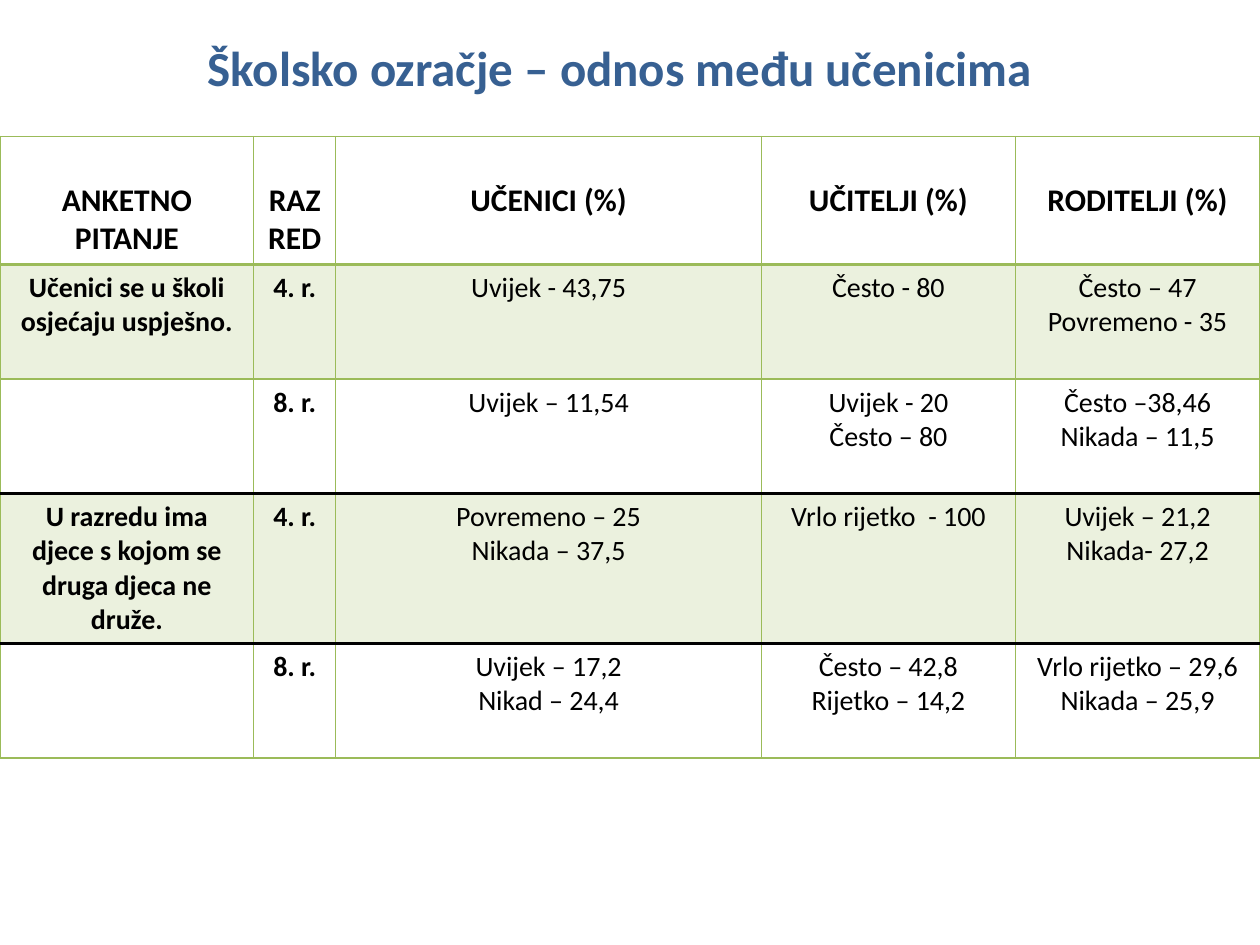
from pptx import Presentation
from pptx.dml.color import RGBColor
from pptx.enum.text import MSO_AUTO_SIZE, PP_ALIGN
from pptx.oxml.ns import qn
from pptx.util import Pt
from lxml import etree

CENTER = PP_ALIGN.CENTER
FIT_SHAPE = MSO_AUTO_SIZE.SHAPE_TO_FIT_TEXT

FONT = "Calibri"
GREEN, PALE_GREEN, BLACK, BLUE = "9BBB59", "EBF1DE", "000000", "376092"
THIN = (GREEN, 1)
HEADER_RULE = (GREEN, 2)
QUESTION_RULE = (BLACK, 2.25)

COLUMN_WIDTHS = [145, 46.8, 243.4, 145, 139.8]
ROW_HEIGHT = 65.5
HEADER_TOP_MARGIN = 25.6

# Each line of a cell is one paragraph
ROWS = [
    ["ANKETNO PITANJE", "RAZRED", "UČENICI (%)", "UČITELJI (%)", "RODITELJI (%)"],
    ["Učenici se u školi osjećaju uspješno.", "4. r.", "Uvijek - 43,75",
     "Često - 80", "Često – 47\nPovremeno - 35"],
    ["", "8. r.", "Uvijek – 11,54", "Uvijek - 20\nČesto – 80",
     "Često –38,46\nNikada – 11,5"],
    ["U razredu ima djece s kojom se druga djeca ne druže.", "4. r.",
     "Povremeno – 25\nNikada – 37,5", "Vrlo rijetko  - 100",
     "Uvijek – 21,2\nNikada- 27,2"],
    ["", "8. r.", "Uvijek – 17,2\nNikad – 24,4", "Često – 42,8\nRijetko – 14,2",
     "Vrlo rijetko – 29,6\nNikada – 25,9"],
]
# Horizontal rules, from above the header to below the last row
RULES = [THIN, HEADER_RULE, THIN, QUESTION_RULE, QUESTION_RULE, THIN]


def color(hex_code):
    return RGBColor.from_string(hex_code)


def write_lines(frame, text, size, hex_code, bold):
    for index, line in enumerate(text.split("\n")):
        para = frame.paragraphs[0] if index == 0 else frame.add_paragraph()
        para.alignment = CENTER
        if line:
            span = para.add_run()
            span.text = line
            span.font.name = FONT
            span.font.size = Pt(size)
            span.font.bold = bold
            span.font.color.rgb = color(hex_code)


def set_border(cell, side, rule):
    hex_code, width = rule
    properties = cell._tc.get_or_add_tcPr()
    line = etree.SubElement(properties, qn(f"a:ln{side}"), w=str(Pt(width)))
    fill = etree.SubElement(line, qn("a:solidFill"))
    etree.SubElement(fill, qn("a:srgbClr"), val=hex_code)


def format_cell(cell, row, column):
    # Borders come before the fill in the cell properties
    sides = {"L": THIN, "R": THIN, "T": RULES[row], "B": RULES[row + 1]}
    for side, rule in sides.items():
        set_border(cell, side, rule)
    if row % 2:
        cell.fill.solid()
        cell.fill.fore_color.rgb = color(PALE_GREEN)
    else:
        cell.fill.background()
    is_header = row == 0
    if is_header:
        cell.margin_top = Pt(HEADER_TOP_MARGIN)
    write_lines(cell.text_frame, ROWS[row][column], 18 if is_header else 16,
                BLACK, is_header or column < 2)


def add_survey_table(page):
    frame = page.shapes.add_table(len(ROWS), len(COLUMN_WIDTHS), Pt(0), Pt(78),
                                  Pt(sum(COLUMN_WIDTHS)), Pt(ROW_HEIGHT * len(ROWS)))
    table = frame.table
    table.first_row = False
    table.horz_banding = False
    for column, width in enumerate(COLUMN_WIDTHS):
        table.columns[column].width = Pt(width)
    for row in range(len(ROWS)):
        table.rows[row].height = Pt(ROW_HEIGHT)
        for column in range(len(COLUMN_WIDTHS)):
            format_cell(table.cell(row, column), row, column)


def add_title(page, text):
    box = page.shapes.add_textbox(Pt(48), Pt(18), Pt(612), Pt(41))
    box.text_frame.word_wrap = True
    box.text_frame.auto_size = FIT_SHAPE
    write_lines(box.text_frame, text, 28, BLUE, True)


def main():
    deck = Presentation()
    deck.slide_width, deck.slide_height = Pt(720), Pt(540)
    page = deck.slides.add_slide(deck.slide_layouts[6])
    add_survey_table(page)
    add_title(page, "Školsko ozračje – odnos među učenicima")
    deck.save("out.pptx")


if __name__ == "__main__":
    main()
